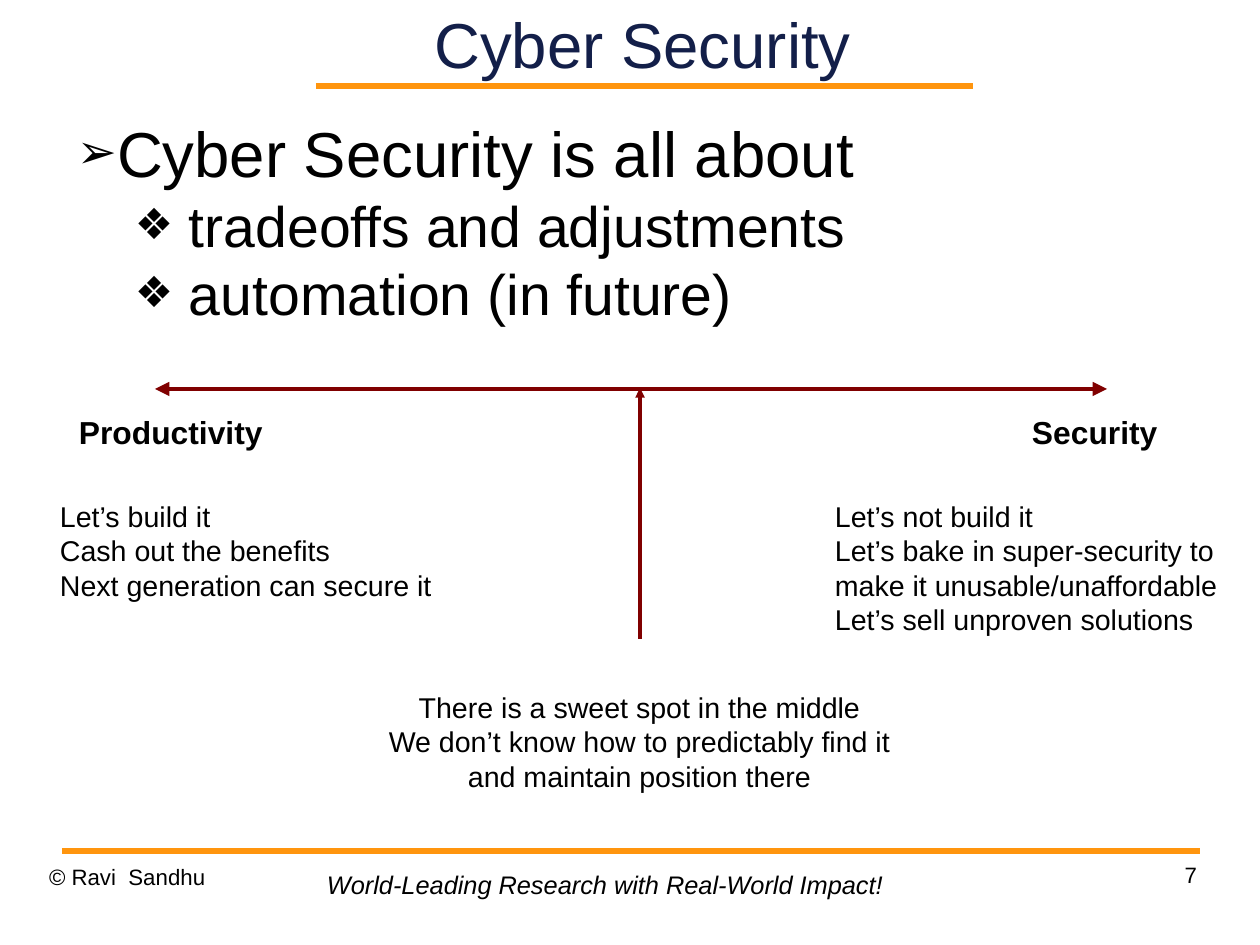
import pptx
import pptx.dml.color
import pptx.enum.shapes
import pptx.enum.text
import pptx.oxml.ns
import pptx.util
import lxml.etree

PX = 8000  # EMU
COLORS = {"title": "131F49", "text": "000000", "rule": "FF950E", "arrow": "800000"}
ALIGN = pptx.enum.text.PP_ALIGN
qn = pptx.oxml.ns.qn


def fill_text(sp, box, lines, size, color="text", align=ALIGN.LEFT, inset=(0, 0), wrap=True):
    """Place a shape at box (px) and give it one uniformly formatted paragraph per line."""
    sp.left, sp.top, sp.width, sp.height = [v * PX for v in box]
    tf = sp.text_frame
    tf.word_wrap = wrap
    tf.auto_size = pptx.enum.text.MSO_AUTO_SIZE.NONE
    tf.margin_left = tf.margin_right = inset[0] * PX
    tf.margin_top = tf.margin_bottom = inset[1] * PX
    tf.text = "\n".join(lines)
    for p in tf.paragraphs:
        p.alignment = align
        p.space_before = pptx.util.Pt(0)
        p.font.name = "Arial"
        p.font.size = pptx.util.Pt(size)
        p.font.color.rgb = pptx.dml.color.RGBColor.from_string(COLORS[color])
    return tf


def add_line(start, end, color, width, ends=()):
    """Draw a line; ends names the arrowheads, headEnd being at start."""
    line = slide.shapes.add_connector(
        pptx.enum.shapes.MSO_CONNECTOR.STRAIGHT, *[v * PX for v in start + end])
    line.line.color.rgb = pptx.dml.color.RGBColor.from_string(COLORS[color])
    line.line.width = pptx.util.Pt(width)
    ln = line.line._get_or_add_ln()
    for name in ends:
        lxml.etree.SubElement(ln, qn("a:" + name), type="triangle")
    lxml.etree.SubElement(line._element.spPr, qn("a:effectLst"))


prs = pptx.Presentation()
prs.slide_width, prs.slide_height = 1260 * PX, 945 * PX
slide = prs.slides.add_slide(prs.slide_layouts[1])
title, body = slide.placeholders

# Header and footer rules
add_line((316, 86), (973, 86), "rule", 4.31)
add_line((62, 851), (1200, 851), "rule", 4.31)

tf = fill_text(title, (315, 0, 655, 86), ["Cyber Security"], 40, "title", ALIGN.CENTER)
tf.vertical_anchor = pptx.enum.text.MSO_ANCHOR.MIDDLE

# Bulleted list: level, bullet, left margin, hanging indent, size
tf = fill_text(body, (63, 114, 1134, 283),
               ["Cyber Security is all about", "tradeoffs and adjustments",
                "automation (in future)"], 40)
tf.vertical_anchor = pptx.enum.text.MSO_ANCHOR.TOP
sub_style = (1, "❖", 126, -54, 36)
for p, style in zip(tf.paragraphs, [(0, "➢", 54, -40, 40), sub_style, sub_style]):
    level, bullet, margin, indent, size = style
    p.level = level
    pPr = p._p.get_or_add_pPr()
    pPr.set("marL", str(margin * PX))
    pPr.set("indent", str(indent * PX))
    bullet_color = lxml.etree.Element(qn("a:buClr"))
    lxml.etree.SubElement(bullet_color, qn("a:srgbClr"), val=COLORS["text"])
    bullet_size = lxml.etree.Element(qn("a:buSzPct"), val="75000")
    bullet_char = lxml.etree.Element(qn("a:buChar"), char=bullet)
    pPr.insert_element_before(bullet_color, "a:tabLst", "a:defRPr")
    bullet_color.addnext(bullet_size)
    bullet_size.addnext(bullet_char)
    p.font.size = pptx.util.Pt(size)

# Footer
for box, text, align in [((49, 863, 294, 65), "© Ravi  Sandhu", ALIGN.LEFT),
                         ((903, 861, 294, 65), "7", ALIGN.RIGHT)]:
    fill_text(slide.shapes.add_textbox(0, 0, 0, 0), box, [text], 14, align=align)
tf = fill_text(slide.shapes.add_textbox(0, 0, 0, 0), (316, 863, 581, 42),
               ["World-Leading Research with Real-World Impact!"], 16,
               inset=(11, 6), wrap=False)
tf.paragraphs[0].font.italic = True

# Tradeoff axis with its sweet spot
add_line((155, 389), (1107, 389), "arrow", 3, ("headEnd", "tailEnd"))
add_line((640, 388), (640, 639), "arrow", 2, ("headEnd",))

for box, label in [((68, 407, 207, 49), "Productivity"), ((1021, 407, 149, 49), "Security")]:
    tf = fill_text(slide.shapes.add_textbox(0, 0, 0, 0), box, [label], 20,
                   inset=(11, 6), wrap=False)
    tf.paragraphs[0].font.bold = True

notes = [
    ((49, 493, 394, 114), ALIGN.LEFT,
     ["Let’s build it", "Cash out the benefits", "Next generation can secure it"]),
    ((824, 493, 406, 149), ALIGN.LEFT,
     ["Let’s not build it", "Let’s bake in super-security to",
      "make it unusable/unaffordable", "Let’s sell unproven solutions"]),
    ((375, 684, 529, 115), ALIGN.CENTER,
     ["There is a sweet spot in the middle", "We don’t know how to predictably find it",
      "and maintain position there"]),
]
for box, align, lines in notes:
    fill_text(slide.shapes.add_textbox(0, 0, 0, 0), box, lines, 18, align=align,
              inset=(11, 6), wrap=False)

prs.save("out.pptx")
